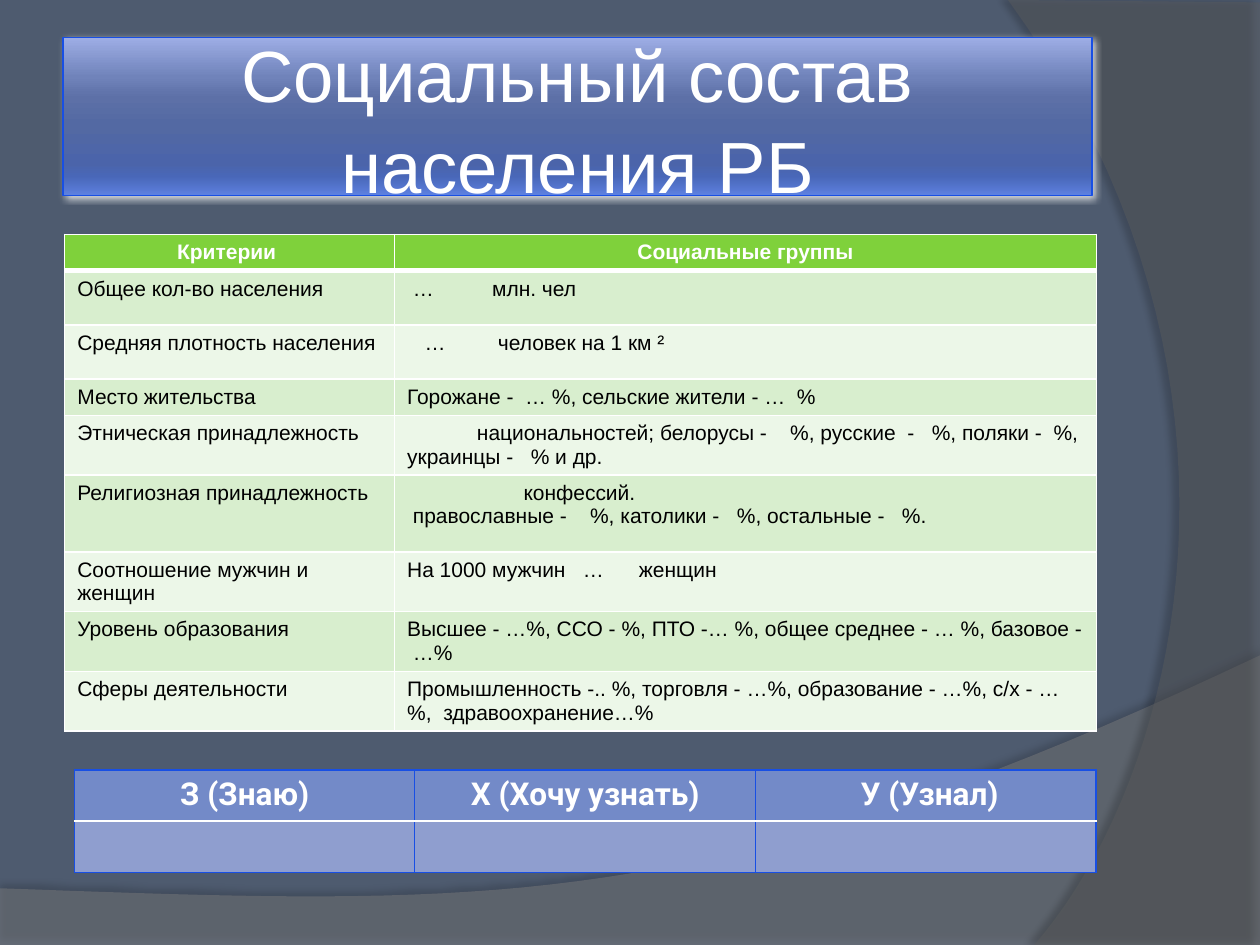
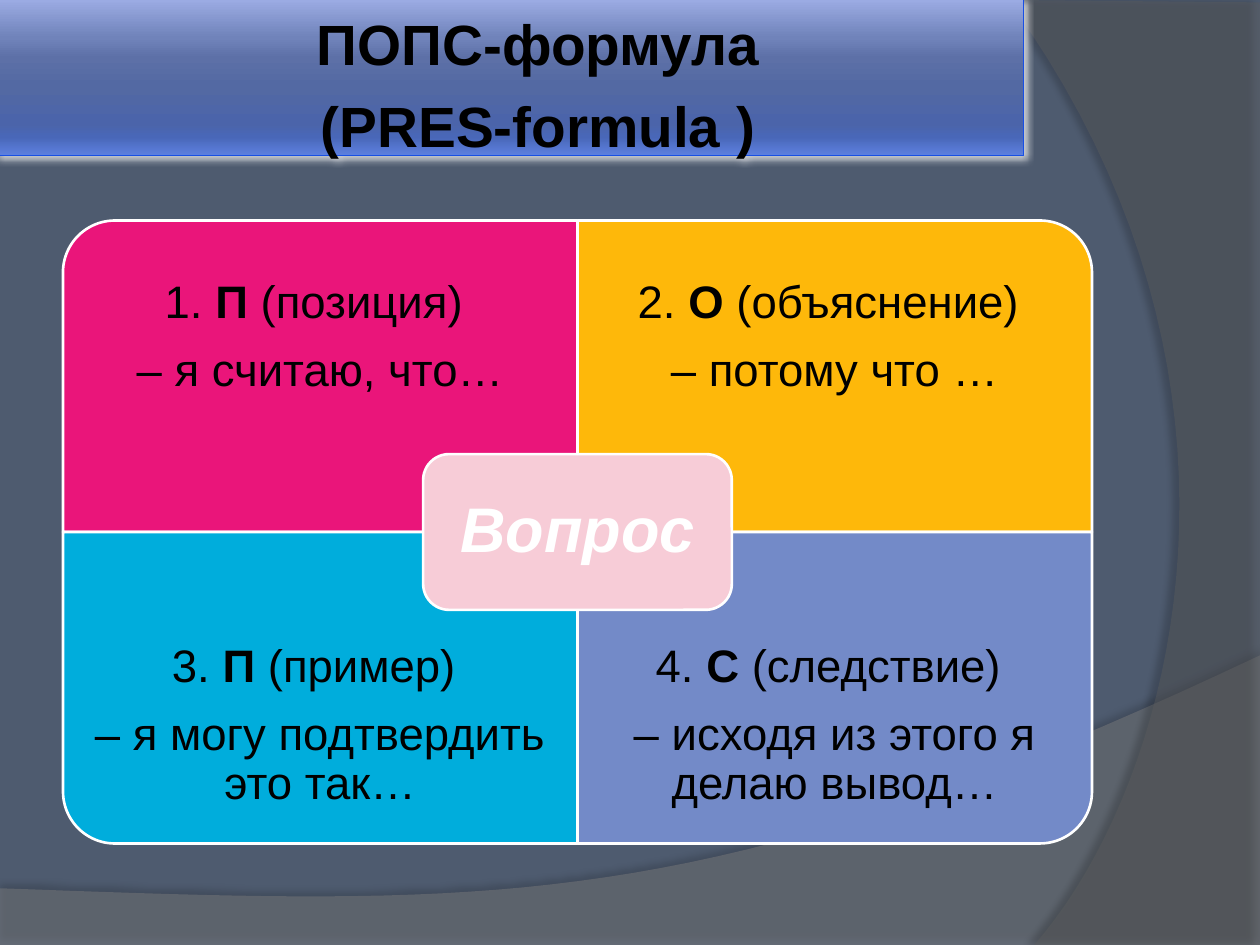
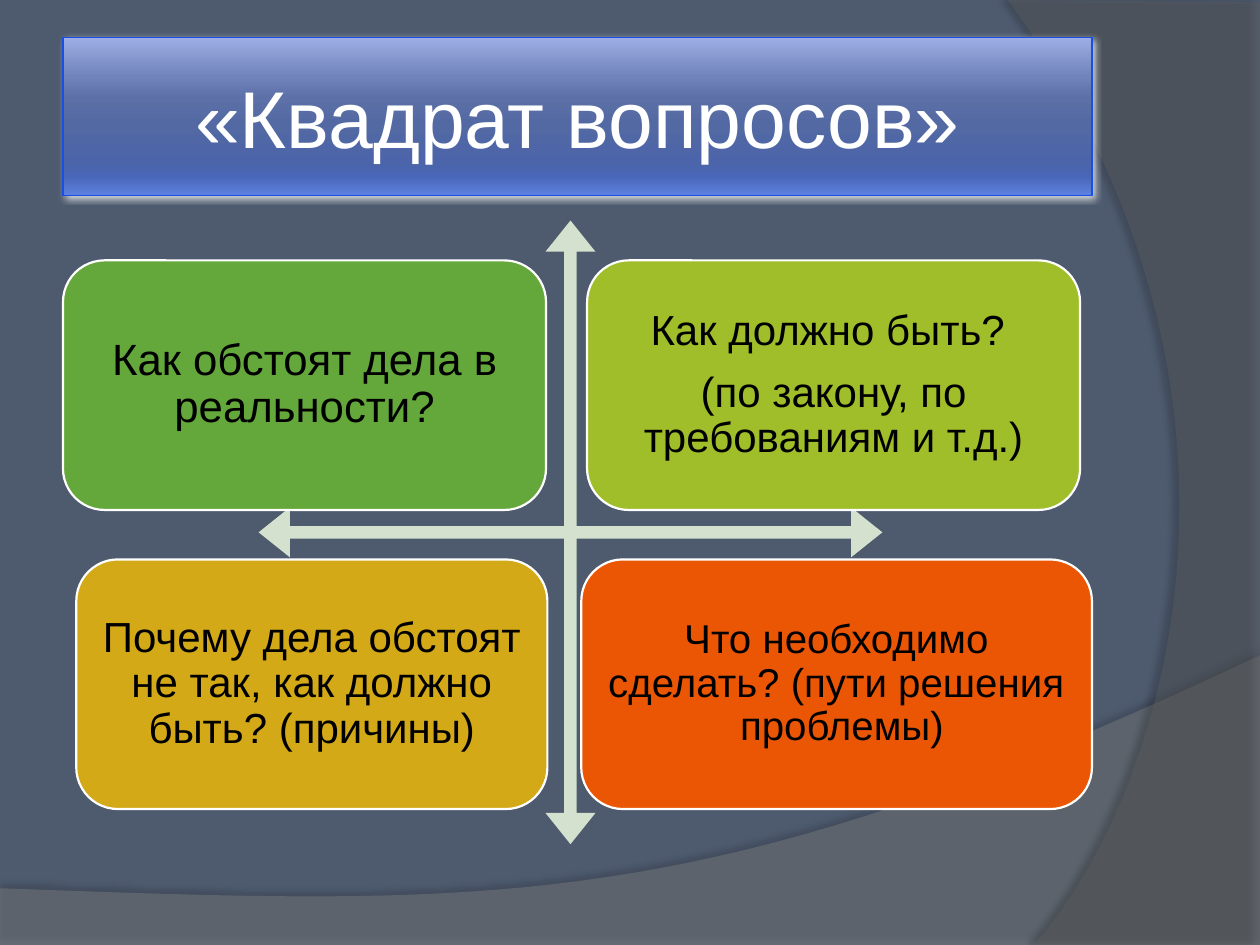
from lxml import etree
from pptx import Presentation
from pptx.dml.color import RGBColor
from pptx.enum.shapes import MSO_SHAPE
from pptx.enum.text import MSO_ANCHOR, MSO_AUTO_SIZE, PP_ALIGN
from pptx.oxml.ns import qn
from pptx.util import Pt

CENTER, LEFT = PP_ALIGN.CENTER, PP_ALIGN.LEFT
MIDDLE, TOP = MSO_ANCHOR.MIDDLE, MSO_ANCHOR.TOP
ROUND, ROUND_ONE = MSO_SHAPE.ROUNDED_RECTANGLE, MSO_SHAPE.ROUND_1_RECTANGLE
QUAD_ARROW = MSO_SHAPE.QUAD_ARROW

WHITE, BLACK, BACKGROUND, BLUE = "FFFFFF", "000000", "4E5B6F", "184FE4"
HEADER_GREEN, BANDS = "7FD13B", ("D8EECE", "ECF7E8")
HEADER_BLUE, PALE_BLUE = "738AC8", "8F9ECF"
TITLE_STOPS = [(0, "9DADE5"), (25, "7083BA"), (38, "5D70A7"), (55, "5369A3"),
               (80, "4B64AA"), (88, "4967B8"), (100, "5D80DF")]
TITLE_SIZE = (588, 90)
TITLE_AT = (36, 21.6)

# Straight corners, then a cubic curve (two controls and an end) from the last corner
WAVES = [
    dict(corners=[(0, 507.6), (0, 540), (720, 540), (720, 374.5)],
         curve=[(402.5, 525), (281.5, 517.7), (0, 507.6)],
         fill="7F7F7F", alpha=45, shadow=(BLACK, 35, 4, 3.5, 270)),
    dict(corners=[(576, 0), (720, 1.4), (720, 540), (591, 540)],
         curve=[(673.2, 445.7), (733, 216), (576, 0)],
         fill="5E5E5E", alpha=40, shadow=(BLACK, 45, 4, 4, 180)),
]

SOCIAL_ROWS = [
    ("Критерии ", "Социальные группы"),
    ("Общее кол-во населения", " …          млн. чел"),
    ("Средняя плотность населения", "   …         человек на 1 км ²"),
    ("Место жительства", "Горожане -  … %, сельские жители - …  %"),
    ("Этническая принадлежность",
     "            национальностей; белорусы -    %, русские  -   %, поляки -  %, "
     "украинцы -   % и др."),
    ("Религиозная принадлежность",
     "                    конфессий.\n"
     " православные -    %, католики -   %, остальные -   %."),
    ("Соотношение мужчин и женщин", "На 1000 мужчин   …      женщин"),
    ("Уровень образования",
     "Высшее - …%, ССО - %, ПТО -… %, общее среднее - … %, базовое -  …%"),
    ("Сферы деятельности",
     "Промышленность -.. %, торговля - …%, образование - …%, с/х - …%,  "
     "здравоохранение…%"),
]
SOCIAL_HEIGHTS = [18, 31, 31, 18, 31, 44, 31, 31, 31]
KNOW_ROWS = [("З (Знаю)", "Х (Хочу узнать)", " У (Узнал)"), ("", "", "")]

# Every second run of a tuple is bold; rotation turns the rounded corner outwards
PRES_PARTS = [
    ("EA157A", 270, [("1. ", "П", " (позиция) "), "– я считаю, что…"]),
    ("FEB80A", 0, [("2. ", "О", " (объяснение) "), "– потому что …"]),
    ("00ADDC", 180, [("3. ", "П", " (пример) "), "– я могу подтвердить это так…"]),
    ("738AC8", 90, [("4. ", "С", " (следствие) "), "– исходя из этого я делаю вывод…"]),
]
QUESTIONS = [
    ("64A73B", (36, 148.8, 276, 142.6), 25, ["Как обстоят дела в реальности?"]),
    ("A0BD2A", (335.5, 148.8, 281.7, 142.6), 24,
     ["Как должно быть? ", "(по закону, по требованиям и т.д.)"]),
    ("D4A918", (43.6, 319.7, 269.2, 142.6), 24,
     ["Почему дела обстоят не так, как должно быть? (причины)"]),
    ("EB5605", (332.2, 319.7, 291.8, 142.6), 23,
     ["Что необходимо сделать? (пути решения  проблемы)"]),
]


def rgb(color):
    return RGBColor.from_string(color)


def pts(values):
    return [Pt(v) for v in values]


def sub(parent, tag, **attrs):
    el = etree.SubElement(parent, qn(tag))
    for name, value in attrs.items():
        el.set(name, str(value))
    return el


def add_color(parent, color, alpha=100):
    clr = sub(parent, "a:srgbClr", val=color)
    if alpha < 100:
        sub(clr, "a:alpha", val=alpha * 1000)


def paint(sp, fill, line=None, width=1.0, alpha=100):
    sp.shadow.inherit = False
    sp.fill.solid()
    sp.fill.fore_color.rgb = rgb(fill)
    if alpha < 100:
        clr = sp.element.spPr.find(qn("a:solidFill"))[0]
        sub(clr, "a:alpha", val=alpha * 1000)
    if line:
        sp.line.color.rgb = rgb(line)
        sp.line.width = Pt(width)
    else:
        sp.line.fill.background()


def add_shadow(sp, color, alpha, blur, dist, angle):
    sp.shadow.inherit = False
    effects = sp.element.spPr.find(qn("a:effectLst"))
    shadow = sub(effects, "a:outerShdw", blurRad=Pt(blur), dist=Pt(dist),
                 dir=angle * 60000, algn="ctr", rotWithShape=0)
    add_color(shadow, color, alpha)


def write(tf, paragraphs, size, color=BLACK, font="Arial", bold=False, italic=False,
          align=CENTER, anchor=MIDDLE, margin=None, spacing=1.0, gap=0):
    tf.word_wrap = True
    tf.vertical_anchor = anchor
    if margin is not None:
        tf.margin_left = tf.margin_right = tf.margin_top = tf.margin_bottom = Pt(margin)
    for i, runs in enumerate(paragraphs):
        p = tf.add_paragraph() if i else tf.paragraphs[0]
        p.alignment = align
        p.line_spacing = spacing
        p.space_before = Pt(gap if i else 0)
        for j, text in enumerate([runs] if isinstance(runs, str) else runs):
            r = p.add_run()
            r.text = text
            r.font.size, r.font.name = Pt(size), font
            r.font.bold, r.font.italic = bold or j % 2 == 1, italic
            r.font.color.rgb = rgb(color)


def write_diagram(sp, paragraphs, size, margin, **fmt):
    write(sp.text_frame, paragraphs, size, margin=margin, spacing=0.9,
          gap=round(size * 0.4, 1), **fmt)


def cubic(start, c1, c2, end, steps=40):
    """Points along a cubic curve, without its start."""
    for k in range(1, steps + 1):
        t = k / steps
        u = 1 - t
        yield tuple(u**3 * a + 3 * u * u * t * b + 3 * u * t * t * c + t**3 * d
                    for a, b, c, d in zip(start, c1, c2, end))


def add_waves_to_master(prs, s):
    """Outline the waves on a slide, then move them behind the master's parts."""
    tree = prs.slide_master.shapes.element
    for i, wave in enumerate(WAVES):
        corners = wave["corners"]
        points = corners[1:] + list(cubic(corners[-1], *wave["curve"]))
        builder = s.shapes.build_freeform(*pts(corners[0]))
        builder.add_line_segments([pts(xy) for xy in points], close=True)
        sp = builder.convert_to_shape()
        paint(sp, wave["fill"], alpha=wave["alpha"])
        add_shadow(sp, *wave["shadow"])
        sp.element.nvSpPr.cNvPr.set("id", str(100 + i))
        tree.insert(2 + i, sp.element)


def add_title(s, lines, size, at=TITLE_AT, indent=0, **fmt):
    sp = s.shapes.title
    sp.left, sp.top, sp.width, sp.height = pts(at + TITLE_SIZE)
    sp.fill.gradient()
    sp.fill.gradient_angle = 270
    stops = sp.element.spPr.find(qn("a:gradFill")).find(qn("a:gsLst"))
    for old in list(stops):
        stops.remove(old)
    for pos, color in TITLE_STOPS:
        add_color(sub(stops, "a:gs", pos=pos * 1000), color)
    sp.line.color.rgb = rgb(BLUE)
    sp.line.width = Pt(0.75)
    add_shadow(sp, WHITE, 75, 4, 1.5, 45)
    tf = sp.text_frame
    tf.auto_size = MSO_AUTO_SIZE.NONE
    write(tf, lines, size, margin=3.6, **fmt)
    tf.margin_left = Pt(3.6 + indent)


def set_borders(cell, color, width, **special):
    tcPr = cell._tc.get_or_add_tcPr()
    for i, side in enumerate("LRTB"):
        c, w = special.get(side, (color, width))
        ln = etree.Element(qn("a:ln" + side), w=str(Pt(w)))
        add_color(sub(ln, "a:solidFill"), c)
        tcPr.insert(i, ln)


def add_grid(s, rows, at, widths, heights, header, bands, border, rule, size, font="Arial"):
    """Table with a header row, banded body rows and a heavier rule below the header."""
    frame = s.shapes.add_table(len(rows), len(widths),
                               *pts(at + (sum(widths), sum(heights))))
    table = frame.table
    for col, width in zip(table.columns, widths):
        col.width = Pt(width)
    for i, (row, height) in enumerate(zip(rows, heights)):
        table.rows[i].height = Pt(height)
        head = i == 0
        special = {"B": rule} if head else {"T": rule} if i == 1 else {}
        for j, text in enumerate(row):
            cell = table.cell(i, j)
            cell.fill.solid()
            cell.fill.fore_color.rgb = rgb(header if head else bands[(i - 1) % len(bands)])
            set_borders(cell, *border, **special)
            if text:
                write(cell.text_frame, text.split("\n"), size, font=font, anchor=TOP,
                      color=WHITE if head else BLACK, bold=head,
                      align=CENTER if head else LEFT)


def build_social(s):
    add_title(s, ["Социальный состав населения РБ"], 41.4, color=WHITE, spacing=1.05)
    add_grid(s, SOCIAL_ROWS, (37, 134), (188.5, 401), SOCIAL_HEIGHTS, HEADER_GREEN,
             BANDS, (WHITE, 1), (WHITE, 3), 12)
    add_grid(s, KNOW_ROWS, (42.5, 440), (194.6,) * 3, (29.2,) * 2, HEADER_BLUE,
             (PALE_BLUE,), (BLUE, 0.75), (WHITE, 1.5), 18, font="Roboto")


def build_pres(s):
    left, top, w, h, text_h = 36, 126, 294, 178, 134
    for i, (color, turn, lines) in enumerate(PRES_PARTS):
        row, col = divmod(i, 2)
        x, y = left + col * w, top + row * h
        sw, sh = (h, w) if turn % 180 else (w, h)
        box = (x + (w - sw) / 2, y + (h - sh) / 2, sw, sh)
        sp = s.shapes.add_shape(ROUND_ONE, *pts(box))
        sp.rotation = turn
        paint(sp, color, WHITE, 1.5)
        label = s.shapes.add_textbox(*pts((x, y + row * (h - text_h), w, text_h)))
        write_diagram(label, lines, 26, 14.4)
    qw, qh = w * 0.6, h / 2
    sp = s.shapes.add_shape(ROUND, *pts((left + w - qw / 2, top + h - qh / 2, qw, qh)))
    paint(sp, "F7CCD7", WHITE, 1.5)
    write_diagram(sp, ["Вопрос"], 36, 10.8, color=WHITE, bold=True, italic=True)
    add_title(s, ["ПОПС-формула", "(PRES-formula )"], 32.4, at=(-3, -1), indent=33,
              bold=True, spacing=1.2)


def build_questions(s):
    add_title(s, ["«Квадрат вопросов»"], 46, color=WHITE)
    arrow = s.shapes.add_shape(QUAD_ARROW, *pts((147.8, 126, 356.4, 356.4)))
    for i, value in enumerate((0.02, 0.04, 0.05)):
        arrow.adjustments[i] = value
    paint(arrow, "D3E1CE")
    for color, box, size, lines in QUESTIONS:
        sp = s.shapes.add_shape(ROUND, *pts(box))
        paint(sp, color, WHITE, 1.25)
        write_diagram(sp, lines, size, 7.2)


def main():
    prs = Presentation()
    prs.slide_width, prs.slide_height = Pt(720), Pt(540)
    fill = prs.slide_master.background.fill
    fill.solid()
    fill.fore_color.rgb = rgb(BACKGROUND)
    title_only = prs.slide_layouts[5]
    for i, build in enumerate((build_social, build_pres, build_questions)):
        s = prs.slides.add_slide(title_only)
        if i == 0:
            add_waves_to_master(prs, s)
        build(s)
    prs.save("out.pptx")


if __name__ == "__main__":
    main()
